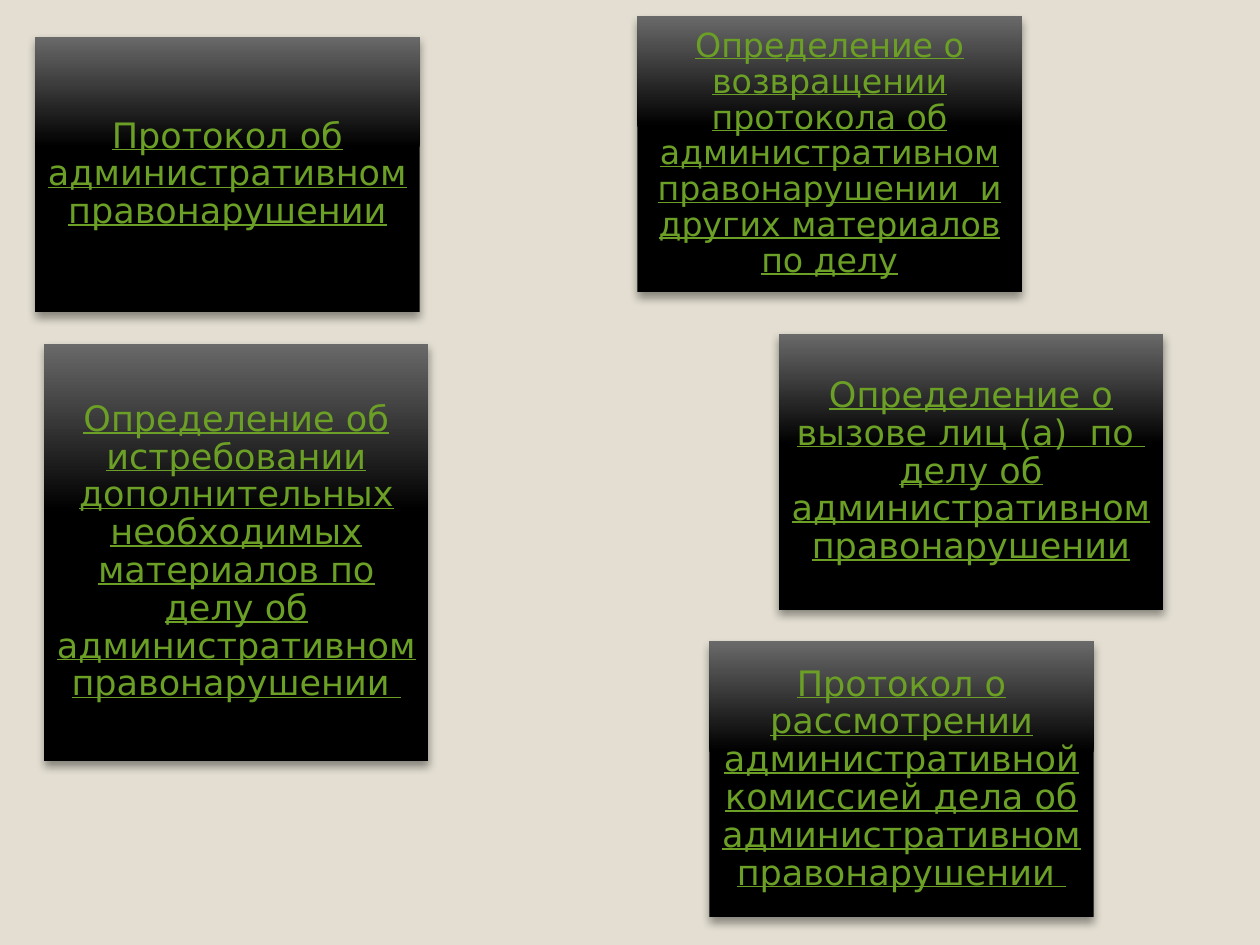
from copy import deepcopy
from typing import NamedTuple

from lxml import etree
from pptx import Presentation, util as u
from pptx.dml.color import RGBColor
from pptx.enum import shapes, text
from pptx.oxml import ns

BLACK, GREY, GREEN, SAND = "000000", "696969", "6B9F25", "E3DED1"
WIDTH, HEIGHT = 7.75, 5.56


class Card(NamedTuple):
    left: float
    top: float
    words: str
    height: float = HEIGHT
    size: float = 20


CARDS = [
    Card(0.71, 0.74, "Протокол об административном правонарушении"),
    Card(15.7, 6.73, "Определение о вызове лиц (а)  по  делу об "
         "административном правонарушении"),
    Card(0.89, 6.93, "Определение об истребовании дополнительных необходимых "
         "материалов по делу об административном правонарушении ", height=8.41),
    Card(14.3, 12.93, "Протокол о рассмотрении административной комиссией дела "
         "об административном правонарушении "),
    Card(12.85, 0.33, "Определение о возвращении протокола об административном "
         "правонарушении  и других материалов по делу", size=19),
]


def paint(color, code: str) -> None:
    color.rgb = RGBColor.from_string(code)


def shade(fill) -> None:
    """Solid black from the bottom, fading to grey at the top."""
    fill.gradient()
    fill.gradient_angle = 90
    low, high = fill.gradient_stops
    for stop, place, code in ((low, 0, BLACK), (high, 1, GREY)):
        stop.position = place
        paint(stop.color, code)


def add_stop(props, place: int) -> None:
    """Repeat the first gradient colour at a later place, in percent."""
    first = props.find(".//" + ns.qn("a:gs"))
    extra = deepcopy(first)
    extra.set("pos", str(place * 1000))
    first.addnext(extra)


def cast(shape) -> None:
    """Give the shape a soft shadow straight below it."""
    shape.shadow.inherit = False
    effects = shape._element.spPr.find(ns.qn("a:effectLst"))
    drop = etree.SubElement(
        effects, ns.qn("a:outerShdw"), blurRad=str(u.Pt(5.2)),
        dist=str(u.Pt(3)), dir="5400000", rotWithShape="0")
    color = etree.SubElement(drop, ns.qn("a:srgbClr"), val=BLACK)
    etree.SubElement(color, ns.qn("a:alpha"), val="40000")


def write(frame, words: str, *, size: float, color: str = GREEN,
          font: str = "DejaVu Sans", inset: float = 0.2) -> None:
    frame.word_wrap = True
    frame.vertical_anchor = text.MSO_ANCHOR.MIDDLE
    frame.margin_left = frame.margin_right = u.Cm(inset)
    frame.margin_top = frame.margin_bottom = u.Cm(inset)
    para = frame.paragraphs[0]
    para.alignment = text.PP_ALIGN.CENTER
    para.line_spacing = 0.9
    run = para.add_run()
    run.text = words
    run.font.name, run.font.size = font, u.Pt(size)
    run.font.underline = True
    paint(run.font.color, color)


def draw(slide, card: Card) -> None:
    box = slide.shapes.add_shape(
        shapes.MSO_SHAPE.RECTANGLE, u.Cm(card.left), u.Cm(card.top),
        u.Cm(WIDTH), u.Cm(card.height))
    shade(box.fill)
    add_stop(box._element.spPr, 60)
    box.line.fill.background()
    cast(box)
    write(box.text_frame, card.words, size=card.size)


def main() -> None:
    deck = Presentation()
    deck.slide_width, deck.slide_height = u.Cm(25.4), u.Cm(19.05)
    slide = deck.slides.add_slide(deck.slide_layouts[6])

    # Background
    back = slide.background.fill
    back.solid()
    paint(back.fore_color, SAND)

    # Document cards
    for card in CARDS:
        draw(slide, card)

    deck.save("out.pptx")


if __name__ == "__main__":
    main()
